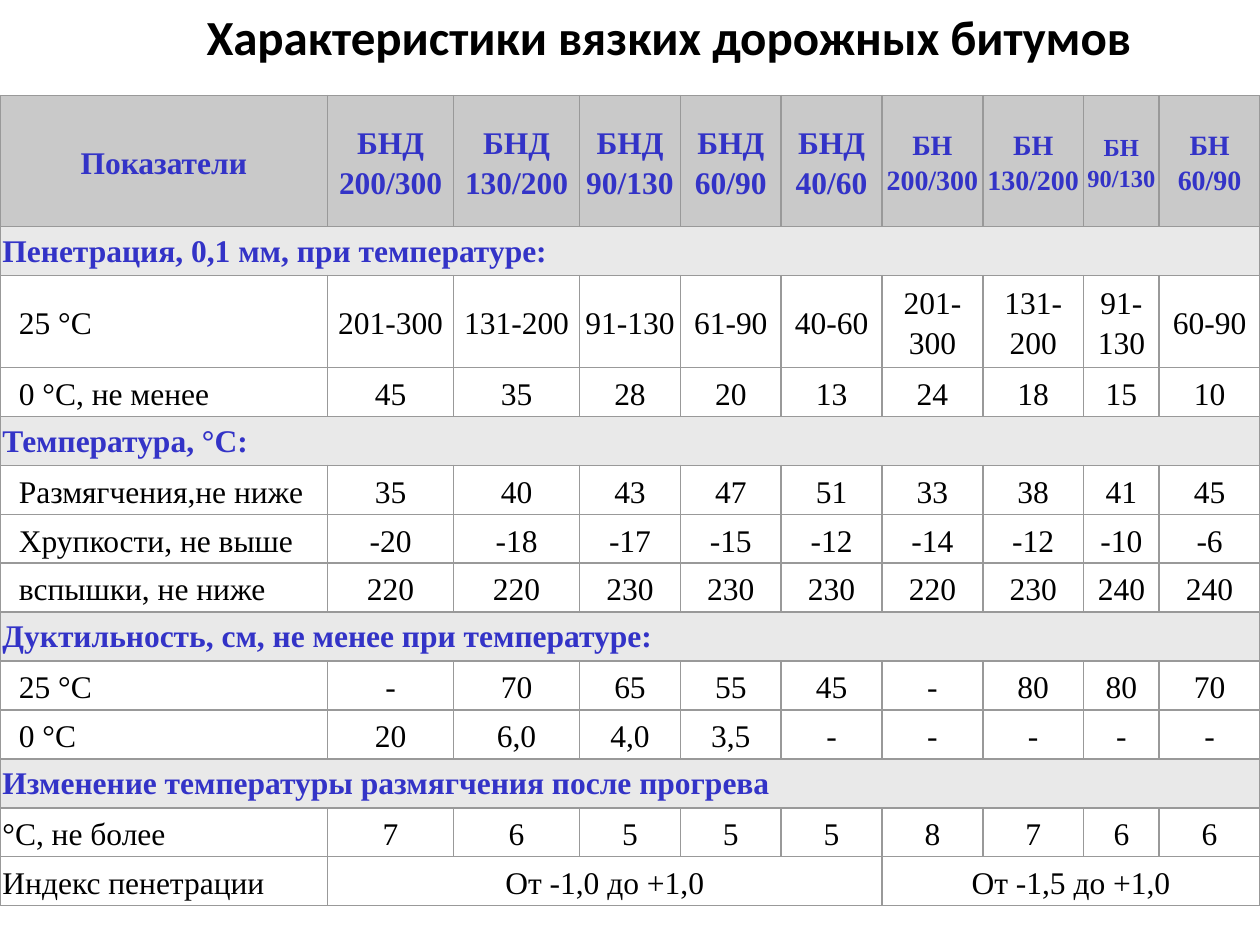
import pptx
import pptx.util
import pptx.dml.color
import pptx.enum.text
import pptx.oxml
from pptx.util import Inches
from pptx.oxml.ns import qn
from lxml import etree

COLORS = {"text": "000000", "accent": "3333C7", "header": "C9C9C9",
          "section": "E9E9E9", "border": "999999"}
FONT = "Times New Roman"
COL_WIDTHS = [2.6, 1, 1, 0.8, 0.8, 0.8, 0.8, 0.8, 0.6, 0.8]
TABLE_HEIGHT, HEADER_HEIGHT, TALL_HEIGHT = 6.41, 1.04, 0.71
TALL_ROW = 2
PAD, INDENT = 0.02, 0.15

HEADERS = [("Показатели", 18), ("БНД 200/300", 18), ("БНД 130/200", 18),
           ("БНД 90/130", 18), ("БНД 60/90", 18), ("БНД 40/60", 18),
           ("БН 200/300", 16), ("БН 130/200", 16), ("БН 90/130", 14),
           ("БН 60/90", 16)]

GROUPS = [
    ("Пенетрация, 0,1 мм, при температуре:", INDENT, [
        ("25 °С", "201-300 131-200 91-130 61-90 40-60 201-300 131-200 91-130 60-90"),
        ("0 °С, не менее", "45 35 28 20 13 24 18 15 10"),
    ]),
    ("Температура, °С:", INDENT, [
        ("Размягчения,не ниже", "35 40 43 47 51 33 38 41 45"),
        ("Хрупкости, не выше", "-20 -18 -17 -15 -12 -14 -12 -10 -6"),
        ("вспышки, не ниже", "220 220 230 230 230 220 230 240 240"),
    ]),
    ("Дуктильность, см, не менее при температуре:", INDENT, [
        ("25 °С", "- 70 65 55 45 - 80 80 70"),
        ("0 °С", "20 6,0 4,0 3,5 - - - - -"),
    ]),
    ("Изменение температуры размягчения после прогрева", PAD, [
        ("°С, не более", "7 6 5 5 5 8 7 6 6"),
    ]),
]
INDEX_LABEL = "Индекс пенетрации"
INDEX_RANGES = [(1, 5, "От -1,0 до +1,0"), (6, 9, "От -1,5 до +1,0")]


def rgb(name):
    return pptx.dml.color.RGBColor.from_string(COLORS[name])


def set_font(p, name, size, color, bold):
    p.font.name = name
    p.font.size = pptx.util.Pt(size)
    p.font.bold = bold
    p.font.color.rgb = rgb(color)


def add_title(s, text):
    title = s.shapes.title
    title.left, title.top = Inches(1.54), Inches(0)
    title.width, title.height = Inches(7.71), Inches(0.57)
    tf = title.text_frame
    tf.text = text
    tf.word_wrap = False
    tf.auto_size = pptx.enum.text.MSO_AUTO_SIZE.SHAPE_TO_FIT_TEXT
    tf.vertical_anchor = pptx.enum.text.MSO_ANCHOR.TOP
    p = tf.paragraphs[0]
    p.alignment = pptx.enum.text.PP_ALIGN.LEFT
    set_font(p, "Calibri", 28, "text", True)


def set_borders(cell):
    tc_pr = cell._tc.get_or_add_tcPr()
    for i, side in enumerate(("lnL", "lnR", "lnT", "lnB")):
        ln = etree.Element(qn(f"a:{side}"), w=str(pptx.util.Pt(1)))
        fill = etree.SubElement(ln, qn("a:solidFill"))
        etree.SubElement(fill, qn("a:srgbClr"), val=COLORS["border"])
        tc_pr.insert(i, ln)


def format_cell(cell, fill):
    cell.margin_left = cell.margin_right = Inches(PAD)
    cell.margin_top = cell.margin_bottom = Inches(PAD)
    if fill:
        cell.fill.solid()
        cell.fill.fore_color.rgb = rgb(fill)
    else:
        cell.fill.background()
    set_borders(cell)


def write_cell(cell, text, size=18, color="text", bold=False, center=True,
               middle=True, left=PAD):
    align = pptx.enum.text.PP_ALIGN
    anchor = pptx.enum.text.MSO_ANCHOR
    cell.text = text
    cell.margin_left = Inches(left)
    cell.vertical_anchor = anchor.MIDDLE if middle else anchor.TOP
    p = cell.text_frame.paragraphs[0]
    p.alignment = align.CENTER if center else align.LEFT
    p.line_spacing = 1.15
    set_font(p, FONT, size, color, bold)


def format_row(table, row, fill=None):
    for col in range(len(COL_WIDTHS)):
        format_cell(table.cell(row, col), fill)


def add_header(table):
    format_row(table, 0, "header")
    for col, (text, size) in enumerate(HEADERS):
        write_cell(table.cell(0, col), text, size, "accent", True)


def add_section(table, row, text):
    format_row(table, row, "section")
    cell = table.cell(row, 0)
    cell.merge(table.cell(row, len(COL_WIDTHS) - 1))
    write_cell(cell, text, color="accent", bold=True, center=False, middle=False)


def add_values(table, row, label, values, left):
    format_row(table, row)
    write_cell(table.cell(row, 0), label, center=False, left=left)
    for col, value in enumerate(values.split(), 1):
        write_cell(table.cell(row, col), value)


def add_index(table, row):
    format_row(table, row)
    write_cell(table.cell(row, 0), INDEX_LABEL, center=False)
    for first, last, text in INDEX_RANGES:
        cell = table.cell(row, first)
        cell.merge(table.cell(row, last))
        write_cell(cell, text)


def add_bitumen_table(s):
    count = 2 + sum(1 + len(rows) for _, _, rows in GROUPS)
    table = s.shapes.add_table(count, len(COL_WIDTHS), Inches(0), Inches(0.76),
                               Inches(10), Inches(TABLE_HEIGHT)).table
    table.first_row = table.horz_banding = False
    for column, width in zip(table.columns, COL_WIDTHS):
        column.width = Inches(width)
    plain = (TABLE_HEIGHT - HEADER_HEIGHT - TALL_HEIGHT) / (count - 2)
    special = {0: HEADER_HEIGHT, TALL_ROW: TALL_HEIGHT}
    for i, table_row in enumerate(table.rows):
        table_row.height = Inches(special.get(i, plain))
    add_header(table)
    row = 1
    for heading, left, rows in GROUPS:
        add_section(table, row, heading)
        for row, (label, values) in enumerate(rows, row + 1):
            add_values(table, row, label, values, left)
        row += 1
    add_index(table, row)


def main():
    prs = pptx.Presentation()
    prs.slide_width, prs.slide_height = Inches(10), Inches(7.5)
    s = prs.slides.add_slide(prs.slide_layouts[5])
    add_title(s, "Характеристики вязких дорожных битумов")
    add_bitumen_table(s)
    prs.save("out.pptx")


if __name__ == "__main__":
    main()
